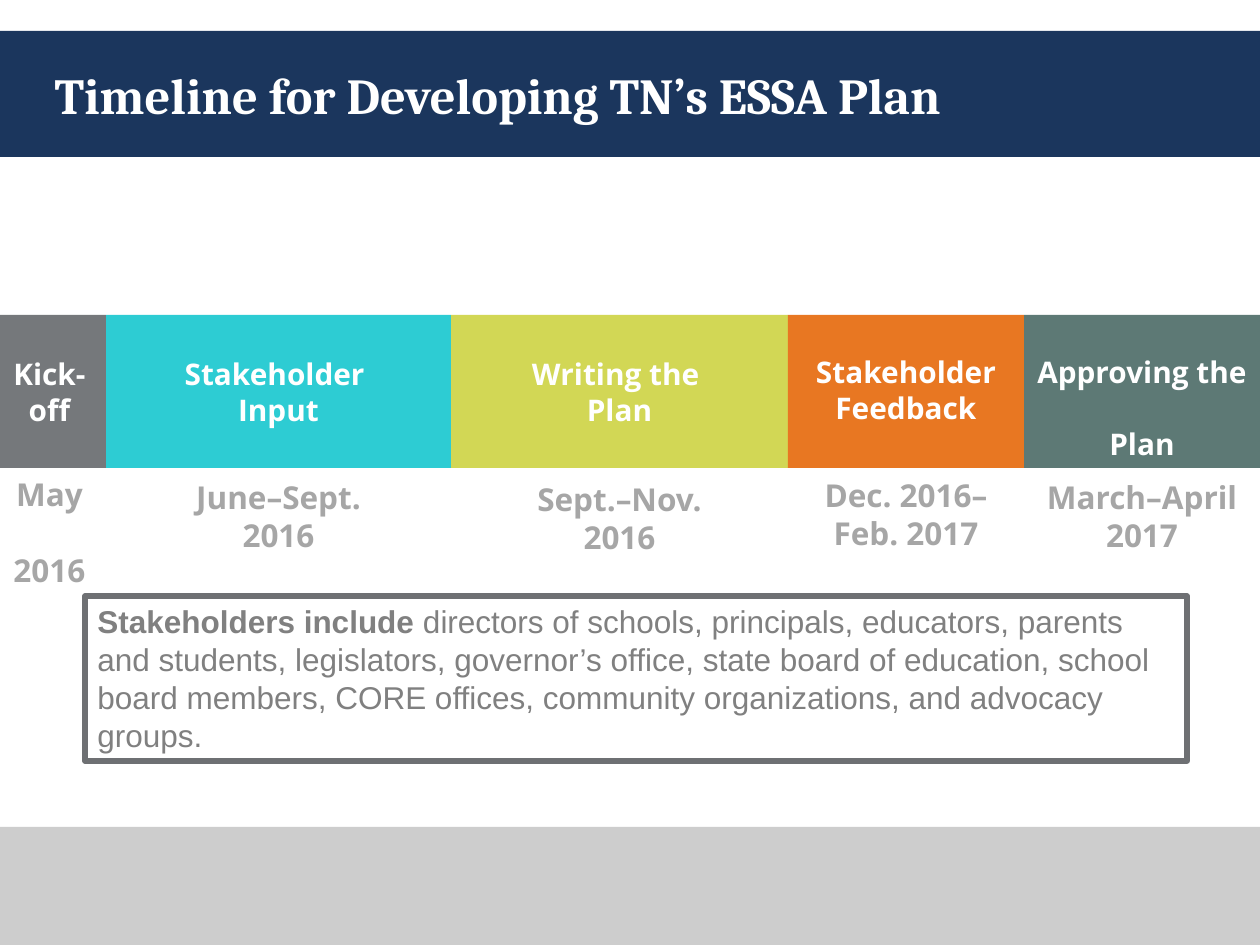
from dataclasses import dataclass
from pptx import Presentation
from pptx import util as u
from pptx.dml.color import RGBColor
from pptx.enum import shapes, text

PX = 914400 / 126  # EMU per px
WHITE, GRAY = "FFFFFF", "A6A6A6"


@dataclass
class Phase:
    right: int
    fill: str
    label: str
    label_top: int
    dates: str
    dates_top: int


# Lengths in px; each phase begins where the one before it ends
TIMELINE_LEFT, TIMELINE_TOP, TIMELINE_H = -2, 315, 153
PHASES = [
    Phase(106, "75787B", "Kick-\voff", 350, "May \v2016", 469),
    Phase(451, "2DCCD3", "Stakeholder \vInput", 350, "June–Sept.\v2016", 472),
    Phase(788, "D2D755", "Writing the \vPlan", 350, "Sept.–Nov.\n2016", 474),
    Phase(1024, "E87722", "Stakeholder Feedback", 348,
          "Dec. 2016–\vFeb. 2017", 470),
    Phase(1260, "5D7975", "Approving the \vPlan", 348,
          "March–April\v2017", 472),
]


def emu(*px: int) -> list[u.Emu]:
    return [u.Emu(round(v * PX)) for v in px]


def rgb(color: str) -> RGBColor:
    return RGBColor.from_string(color)


def style(font, name: str, size: float, color: str, bold: bool) -> None:
    font.name, font.size, font.bold = name, u.Pt(size), bold
    font.color.rgb = rgb(color)


def add_rect(parent, x: int, y: int, w: int, h: int, fill: str):
    sp = parent.add_shape(shapes.MSO_SHAPE.RECTANGLE, *emu(x, y, w, h))
    sp.shadow.inherit = False
    sp.fill.solid()
    sp.fill.fore_color.rgb = rgb(fill)
    sp.line.fill.background()
    return sp


def add_caption(parent, x: int, y: int, w: int, h: int,
                words: str, size: float, color: str) -> None:
    tf = parent.add_textbox(*emu(x, y, w, h)).text_frame
    tf.word_wrap = True
    tf.text = words
    for p in tf.paragraphs:
        p.alignment = text.PP_ALIGN.CENTER
        style(p.font, "Open Sans", size, color, True)


def add_timeline(s) -> None:
    group = s.shapes.add_group_shape().shapes
    left = TIMELINE_LEFT
    for i, ph in enumerate(PHASES):
        w = ph.right - left
        add_rect(group, left, TIMELINE_TOP, w, TIMELINE_H, ph.fill)
        # The narrow first phase has its own caption widths
        label_x, label_w = (left, w) if i else (-100, 299)
        dates_x, dates_w = (left, w) if i else (0, 99)
        add_caption(group, label_x, ph.label_top, label_w, 74,
                    ph.label, 17, WHITE)
        add_caption(group, dates_x, ph.dates_top, dates_w, 78,
                    ph.dates, 18, GRAY)
        left = ph.right


def add_title(s, words: str) -> None:
    sp = s.shapes.title
    sp.left, sp.top, sp.width, sp.height = emu(42, 31, 1144, 126)
    tf = sp.text_frame
    tf.text = words
    tf.word_wrap = True
    tf.auto_size = text.MSO_AUTO_SIZE.NONE
    tf.vertical_anchor = text.MSO_ANCHOR.MIDDLE
    p = tf.paragraphs[0]
    p.alignment = text.PP_ALIGN.LEFT
    style(p.font, "Cambria", 28.8, WHITE, True)
    s.shapes._spTree.append(sp._element)  # in front of the header band


def add_stakeholder_box(s) -> None:
    sp = add_rect(s.shapes, 85, 596, 1102, 165, WHITE)
    sp.line.color.rgb = rgb("6E7073")
    sp.line.width = u.Pt(3)
    tf = sp.text_frame
    tf.word_wrap = True
    tf.vertical_anchor = text.MSO_ANCHOR.TOP
    p = tf.paragraphs[0]
    p.alignment = text.PP_ALIGN.LEFT
    for words, bold in [
        ("Stakeholders include ", True),
        ("directors of schools, principals, educators, parents and students, "
         "legislators, governor’s office, state board of education, school "
         "board members, CORE offices, community organizations, and advocacy "
         "groups.", False),
    ]:
        r = p.add_run()
        r.text = words
        style(r.font, "Arial", 18, "808080", bold)


def main() -> None:
    prs = Presentation()
    prs.slide_width, prs.slide_height = emu(1260, 945)
    s = prs.slides.add_slide(prs.slide_layouts[5])  # title only

    # Header and footer bands
    add_rect(s.shapes, 0, 31, 1260, 126, "1B365D")
    add_rect(s.shapes, 0, 827, 1260, 118, "CDCDCD")

    add_title(s, "Timeline for Developing TN’s ESSA Plan")
    add_timeline(s)
    add_stakeholder_box(s)
    prs.save("out.pptx")


if __name__ == "__main__":
    main()
